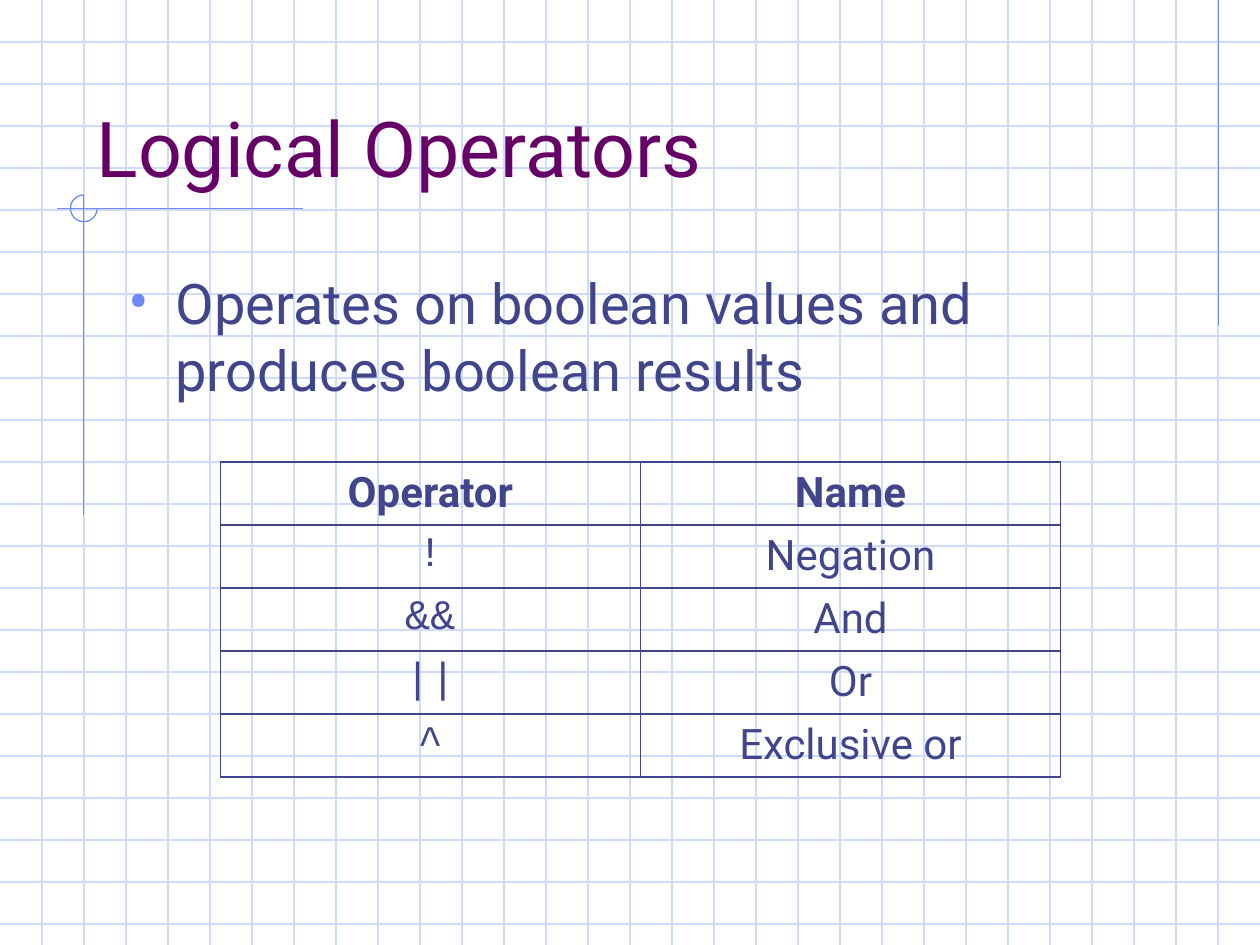
from lxml.etree import SubElement
from pptx import Presentation
from pptx.dml.color import RGBColor
from pptx.enum.shapes import MSO_CONNECTOR as Link, MSO_SHAPE as Shape
from pptx.enum.text import MSO_ANCHOR as Anchor, PP_ALIGN as Align
from pptx.oxml.ns import qn
from pptx.util import Cm, Pt

PLUM = RGBColor(0x66, 0x00, 0x66)
NAVY = RGBColor(0x40, 0x45, 0x8C)
BLUE = RGBColor(0x6F, 0x89, 0xF7)
PALE = RGBColor(0xCF, 0xDB, 0xFD)
SANS, MONO = "Roboto", "Courier New"

TITLE = "Logical Operators"
POINT = "Operates on boolean values and produces boolean results"
ROWS = [
    ("Operator", "Name"),
    ("!", "Negation"),
    ("&&", "And"),
    ("||", "Or"),
    ("^", "Exclusive or"),
]

WIDTH, HEIGHT = 25.4, 19.05
STEP = WIDTH / 30  # spacing of the background grid
# Centre and radius of the ring, in cm
RING_X, RING_Y, RADIUS = 1.69, 4.2, 0.27
RULES = [
    (24.56, 0, 24.56, 6.55),
    (6.1, RING_Y, 1.14, RING_Y),
    (RING_X, RING_Y - RADIUS, RING_X, 10.39),
]
COL, ROW = 8.47, 1.03  # rows grow to fit their text


def style(para, size, color, face=SANS, bold=False):
    font = para.font
    font.name, font.size, font.bold = face, Pt(size), bold
    font.color.rgb = color


def add_text(slide, text, left, top, anchor):
    box = slide.shapes.add_textbox(Cm(left), Cm(top), Cm(21.59), Cm(3.18))
    frame = box.text_frame
    frame.word_wrap = True
    frame.vertical_anchor = anchor
    frame.text = text
    return frame.paragraphs[0]


def add_bullet(para):
    props = para._p.get_or_add_pPr()
    props.set("marL", str(Cm(0.95)))
    props.set("indent", str(-Cm(0.95)))
    tint = SubElement(props, qn("a:buClr"))
    SubElement(tint, qn("a:srgbClr"), val=str(BLUE))
    SubElement(props, qn("a:buSzPct"), val="110000")
    SubElement(props, qn("a:buFont"), typeface=SANS)
    SubElement(props, qn("a:buChar"), char="•")


def add_borders(cell):
    props = cell._tc.get_or_add_tcPr()
    for side in "LRTB":
        line = SubElement(props, qn(f"a:ln{side}"), w=str(Pt(1)))
        fill = SubElement(line, qn("a:solidFill"))
        SubElement(fill, qn("a:srgbClr"), val=str(NAVY))


def add_rule(slide, ends, color):
    rule = slide.shapes.add_connector(Link.STRAIGHT, *map(Cm, ends))
    rule.line.color.rgb = color
    rule.line.width = Pt(0.75)
    SubElement(rule._element.spPr, qn("a:effectLst"))


def add_decor(slide):
    """Draw the pale grid, the thin lines and the three-quarter ring."""
    for n in range(1, 23):
        add_rule(slide, (0, n * STEP, WIDTH, n * STEP), PALE)
    for n in range(1, 30):
        add_rule(slide, (n * STEP, 0, n * STEP, HEIGHT), PALE)
    for ends in RULES:
        add_rule(slide, ends, BLUE)
    ring = slide.shapes.add_shape(
        Shape.ARC, Cm(RING_X - RADIUS), Cm(RING_Y - RADIUS),
        Cm(2 * RADIUS), Cm(2 * RADIUS))
    ring.adjustments[0] = 0
    ring.adjustments[1] = 162  # 270 degrees in units of 1/0.6
    ring.fill.background()
    ring.line.color.rgb = BLUE
    ring.line.width = Pt(0.75)
    ring.shadow.inherit = False


def add_grid(slide):
    count, width = len(ROWS), len(ROWS[0])
    table = slide.shapes.add_table(
        count, width, Cm(4.44), Cm(9.31), Cm(COL * width), Cm(ROW * count)).table
    table.first_row = table.horz_banding = False
    for r, texts in enumerate(ROWS):
        table.rows[r].height = Cm(ROW)
        for c, text in enumerate(texts):
            cell = table.cell(r, c)
            cell.text = text
            add_borders(cell)
            cell.fill.background()
            para = cell.text_frame.paragraphs[0]
            para.alignment = Align.CENTER
            style(para, 24, NAVY, MONO if r and not c else SANS, bold=r == 0)


def main():
    deck = Presentation()
    deck.slide_width, deck.slide_height = Cm(WIDTH), Cm(HEIGHT)
    slide = deck.slides.add_slide(deck.slide_layouts[6])
    add_decor(slide)
    style(add_text(slide, TITLE, 1.7, 0.84, Anchor.BOTTOM), 44, PLUM)
    point = add_text(slide, POINT, 2.34, 5.29, Anchor.TOP)
    add_bullet(point)
    style(point, 32, NAVY)
    add_grid(slide)
    deck.save("out.pptx")


if __name__ == "__main__":
    main()
